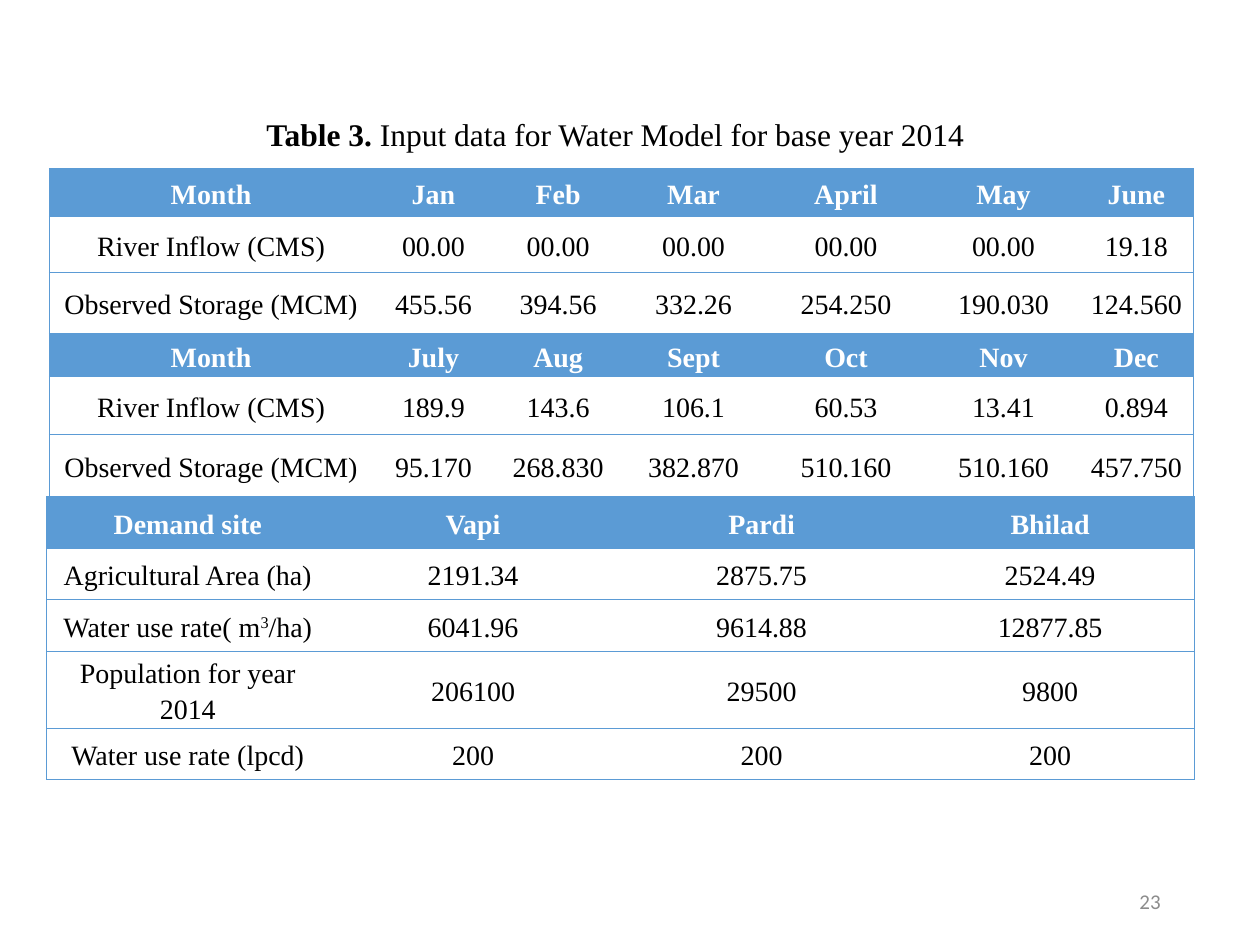
from lxml import etree
from pptx import Presentation
from pptx import util as u
from pptx.dml import color
from pptx.enum import text
from pptx.oxml import ns

BLUE, WHITE, BLACK, GREY = "5B9BD5", "FFFFFF", "000000", "8C8C8C"
SERIF = "Times New Roman"


def rgb(value):
    return color.RGBColor.from_string(value)


def set_border(cell, side, value):
    line = etree.SubElement(cell._tc.get_or_add_tcPr(), ns.qn(f"a:ln{side}"), w=str(u.Pt(0.5)))
    if value is None:
        etree.SubElement(line, ns.qn("a:noFill"))
    else:
        fill = etree.SubElement(line, ns.qn("a:solidFill"))
        etree.SubElement(fill, ns.qn("a:srgbClr"), val=value)


presentation = Presentation()
presentation.slide_width = u.Inches(10)
presentation.slide_height = u.Inches(7.5)
slide = presentation.slides.add_slide(presentation.slide_layouts[5])

monthly_rows = [
    ["Month", "Jan", "Feb", "Mar", "April", "May", "June"],
    ["River Inflow (CMS)"] + ["00.00"] * 5 + ["19.18"],
    ["Observed Storage (MCM)", "455.56", "394.56", "332.26", "254.250", "190.030", "124.560"],
    ["Month", "July", "Aug", "Sept", "Oct", "Nov", "Dec"],
    ["River Inflow (CMS)", "189.9", "143.6", "106.1", "60.53", "13.41", "0.894"],
    ["Observed Storage (MCM)", "95.170", "268.830", "382.870", "510.160", "510.160", "457.750"],
]
demand_rows = [
    ["Demand site", "Vapi", "Pardi", "Bhilad"],
    ["Agricultural Area (ha)", "2191.34", "2875.75", "2524.49"],
    ["Water use rate( m^3^/ha)", "6041.96", "9614.88", "12877.85"],
    ["Population for year 2014", "206100", "29500", "9800"],
    ["Water use rate (lpcd)", "200", "200", "200"],
]
tables = [
    (0.39, 1.34, [2.57, 0.96, 1.02, 1.13, 1.29, 1.21, 0.9],
     [0.38, 0.44, 0.49, 0.34, 0.46, 0.5], monthly_rows, (0, 3)),
    (0.37, 3.94, [2.24] + [2.29] * 3, [0.41, 0.41, 0.41, 0.61, 0.41], demand_rows, (0,)),
]

for left, top, widths, heights, rows, header_rows in tables:
    table = slide.shapes.add_table(
        len(rows), len(widths), u.Inches(left), u.Inches(top),
        u.Inches(sum(widths)), u.Inches(sum(heights))).table
    table.first_row = table.horz_banding = False
    for column, width in zip(table.columns, widths):
        column.width = u.Inches(width)
    for row_index, (height, values) in enumerate(zip(heights, rows)):
        table.rows[row_index].height = u.Inches(height)
        is_header = row_index in header_rows
        for column_index, value in enumerate(values):
            cell = table.cell(row_index, column_index)
            cell.margin_left = cell.margin_right = u.Inches(0.07)
            cell.margin_top = cell.margin_bottom = 0
            cell.vertical_anchor = text.MSO_ANCHOR.MIDDLE
            set_border(cell, "L", BLUE if column_index == 0 else None)
            set_border(cell, "R", BLUE if column_index == len(values) - 1 else None)
            set_border(cell, "T", BLUE)
            set_border(cell, "B", BLUE)
            cell.fill.solid()
            cell.fill.fore_color.rgb = rgb(BLUE if is_header else WHITE)
            paragraph = cell.text_frame.paragraphs[0]
            paragraph.alignment = text.PP_ALIGN.CENTER
            paragraph.line_spacing = 1.15
            paragraph.font.name = SERIF
            paragraph.font.size = u.Pt(16)
            paragraph.font.bold = is_header
            paragraph.font.color.rgb = rgb(WHITE if is_header else BLACK)
            for part_index, part in enumerate(value.split("^")):
                run = paragraph.add_run()
                run.text = part
                if part_index == 1:
                    run.font._element.set("baseline", "30000")

title = slide.shapes.title
title.left, title.top = u.Inches(0.74), u.Inches(0.86)
title.width, title.height = u.Inches(8.29), u.Inches(0.4)
title.text_frame.vertical_anchor = text.MSO_ANCHOR.TOP
title.text_frame.auto_size = text.MSO_AUTO_SIZE.NONE
paragraph = title.text_frame.paragraphs[0]
paragraph.alignment = text.PP_ALIGN.CENTER
paragraph.font.name = SERIF
paragraph.font.size = u.Pt(18)
paragraph.font.color.rgb = rgb(BLACK)
for words, bold in [("Table 3.", True), (" Input data for Water Model for base year 2014", False)]:
    run = paragraph.add_run()
    run.text = words
    run.font.bold = bold

page_number = slide.shapes.add_textbox(u.Inches(7.06), u.Inches(6.95), u.Inches(2.25), u.Inches(0.4))
page_number.text_frame.word_wrap = True
page_number.text_frame.vertical_anchor = text.MSO_ANCHOR.MIDDLE
paragraph = page_number.text_frame.paragraphs[0]
paragraph.text = "23"
paragraph.alignment = text.PP_ALIGN.RIGHT
paragraph.font.name = "Calibri"
paragraph.font.size = u.Pt(12)
paragraph.font.color.rgb = rgb(GREY)

presentation.save("out.pptx")
